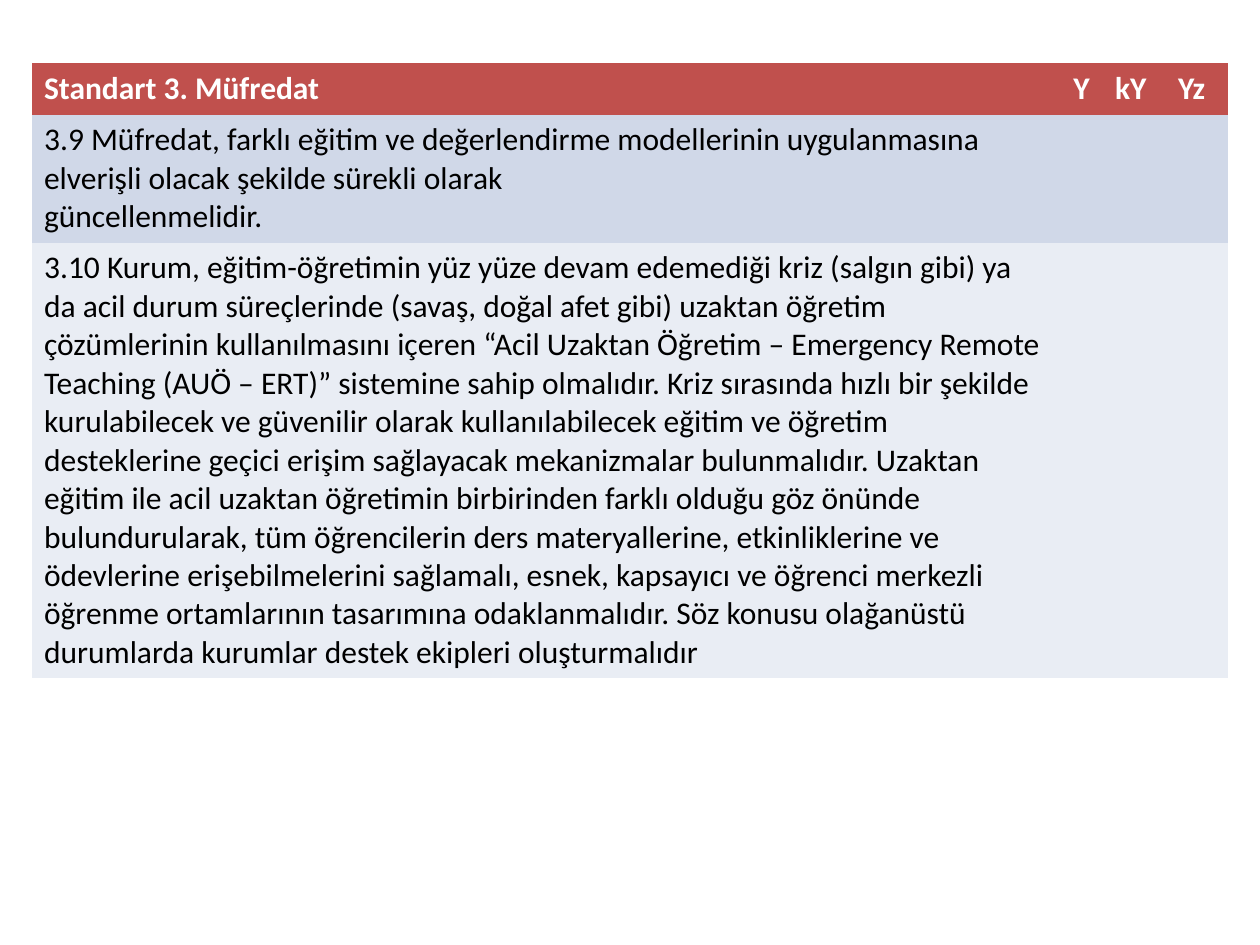
from pptx import Presentation
from pptx.dml.color import RGBColor
from pptx.util import Inches, Pt

RED = RGBColor(0xC0, 0x50, 0x4D)
BLUE = RGBColor(0xD0, 0xD8, 0xE8)
PALE = RGBColor(0xE9, 0xED, 0xF4)
WHITE = RGBColor(0xFF, 0xFF, 0xFF)
BLACK = RGBColor(0x00, 0x00, 0x00)

BLANK = 6
NO_GRID = "{2D5ABB26-0587-4C30-8999-92F81FD0307C}"

WIDTHS = [8.17, 0.33, 0.5, 0.5]
ROW_HEIGHT = 0.41
HEAD = ["Standart 3. Müfredat", "Y", "kY", "Yz"]
ITEMS = [
    "3.9 Müfredat, farklı eğitim ve değerlendirme modellerinin uygulanmasına "
    "elverişli olacak şekilde sürekli olarak\n"
    "güncellenmelidir.",
    "3.10 Kurum, eğitim-öğretimin yüz yüze devam edemediği kriz (salgın gibi) "
    "ya da acil durum süreçlerinde (savaş, doğal afet gibi) uzaktan öğretim "
    "çözümlerinin kullanılmasını içeren “Acil Uzaktan Öğretim – Emergency "
    "Remote Teaching (AUÖ – ERT)” sistemine sahip olmalıdır. Kriz sırasında "
    "hızlı bir şekilde kurulabilecek ve güvenilir olarak kullanılabilecek "
    "eğitim ve öğretim desteklerine geçici erişim sağlayacak mekanizmalar "
    "bulunmalıdır. Uzaktan eğitim ile acil uzaktan öğretimin birbirinden "
    "farklı olduğu göz önünde bulundurularak, tüm öğrencilerin ders "
    "materyallerine, etkinliklerine ve ödevlerine erişebilmelerini sağlamalı, "
    "esnek, kapsayıcı ve öğrenci merkezli öğrenme ortamlarının tasarımına "
    "odaklanmalıdır. Söz konusu olağanüstü durumlarda kurumlar destek ekipleri "
    "oluşturmalıdır",
]


class Deck:
    """Holds the text style and the current slide."""

    def __init__(self, slide, font="Calibri", size=18):
        self.slide = slide
        self.font = font
        self.size = Pt(size)

    def add_text(self, para, text, color, bold):
        for i, line in enumerate(text.split("\n")):
            if i:
                para.add_line_break()
            run = para.add_run()
            run.text = line
            run.font.name = self.font
            run.font.size = self.size
            run.font.bold = bold
            run.font.color.rgb = color

    def fill_row(self, row, texts, fill, color, bold=False):
        """Shade every cell of the row and set the texts from the left."""
        for cell in row.cells:
            cell.fill.solid()
            cell.fill.fore_color.rgb = fill
        for cell, text in zip(row.cells, texts):
            self.add_text(cell.text_frame.paragraphs[0], text, color, bold)

    def table(self, left, top, widths, head, items):
        count = len(items) + 1
        frame = self.slide.shapes.add_table(
            count, len(widths), Inches(left), Inches(top),
            Inches(sum(widths)), Inches(ROW_HEIGHT * count))
        table = frame.table
        table.first_row = table.horz_banding = False
        table._tbl.tblPr.find("{*}tableStyleId").text = NO_GRID
        for col, width in zip(table.columns, widths):
            col.width = Inches(width)
        self.fill_row(table.rows[0], head, RED, WHITE, bold=True)
        for i, item in enumerate(items):
            fill = PALE if i % 2 else BLUE
            self.fill_row(table.rows[i + 1], [item], fill, BLACK)


def main():
    prs = Presentation()
    prs.slide_width = Inches(10)
    prs.slide_height = Inches(7.5)
    deck = Deck(prs.slides.add_slide(prs.slide_layouts[BLANK]))
    deck.table(0.25, 0.5, WIDTHS, HEAD, ITEMS)
    prs.save("out.pptx")


if __name__ == "__main__":
    main()
